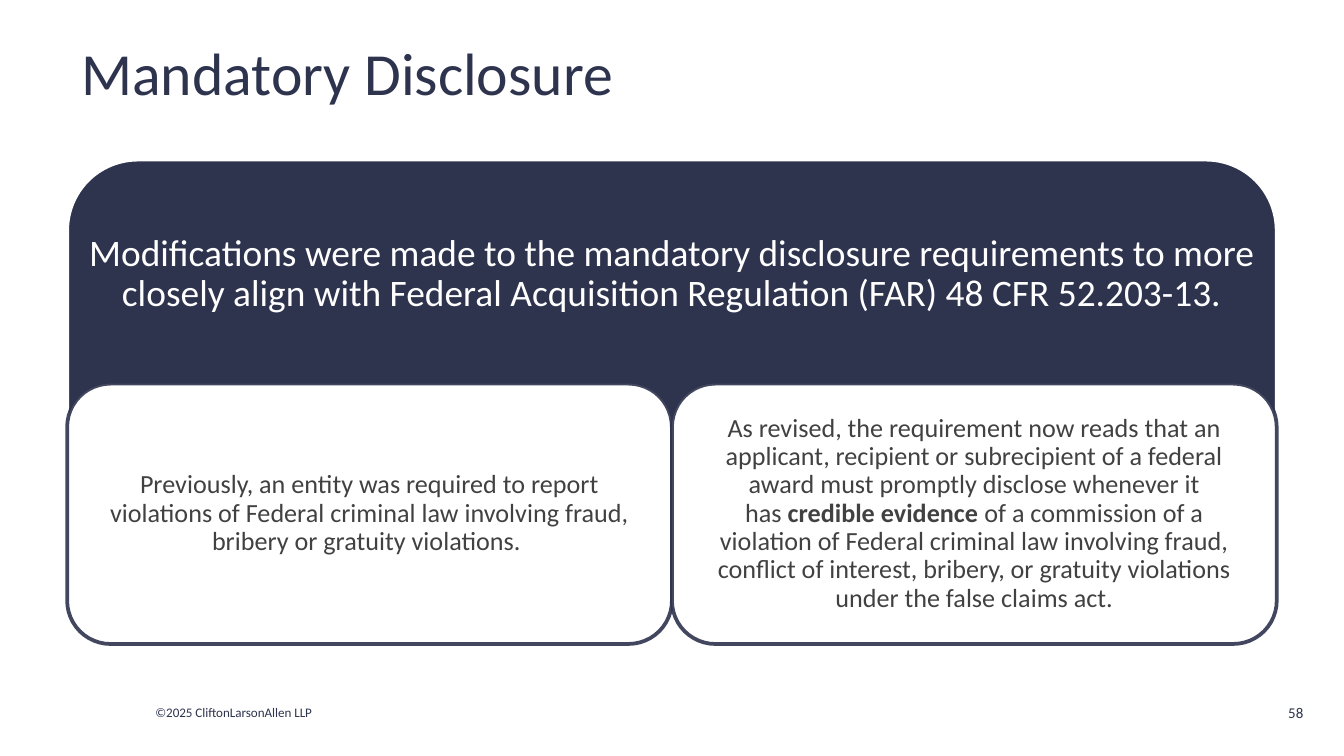
"""Build the Mandatory Disclosure slide: a banner over two rounded cards."""
from lxml import etree
from pptx import Presentation
from pptx.dml.color import RGBColor
from pptx.enum.shapes import MSO_SHAPE as SHAPE
from pptx.enum.text import MSO_ANCHOR as ANCHOR, PP_ALIGN as ALIGN
from pptx.oxml.ns import qn
from pptx.util import Pt

PX = 9525
NBSP = chr(160)
COLORS = {"navy": "2E334E", "white": "FFFFFF", "gray": "414142"}


def rounded(shapes, box, fill, line):
    sp = shapes.add_shape(SHAPE.ROUNDED_RECTANGLE, *[v * PX for v in box])
    sp.shadow.inherit = False
    sp.fill.solid()
    sp.fill.fore_color.rgb = RGBColor.from_string(COLORS[fill])
    sp.line.color.rgb = RGBColor.from_string(COLORS[line])
    sp.line.width = Pt(2)
    return sp


def write(sp, runs, size, color, align=ALIGN.LEFT, inset=(10, 5), spacing=1.0):
    tf = sp.text_frame
    x, y = [v * PX for v in inset]
    frame = {"word_wrap": True, "vertical_anchor": ANCHOR.MIDDLE,
             "margin_left": x, "margin_right": x, "margin_top": y, "margin_bottom": y}
    for name, value in frame.items():
        setattr(tf, name, value)
    p = tf.paragraphs[0]
    p.alignment = align
    p.line_spacing = spacing
    for text, bold in runs:
        r = p.add_run()
        r.text = text
        for name, value in {"name": "Calibri", "size": Pt(size), "bold": bold}.items():
            setattr(r.font, name, value)
        r.font.color.rgb = RGBColor.from_string(COLORS[color])


prs = Presentation()
prs.slide_width, prs.slide_height = 960 * PX, 540 * PX
s = prs.slides.add_slide(prs.slide_layouts[5])

title = s.shapes.title
title.left, title.top, title.width, title.height = [v * PX for v in (48, 15, 864, 72)]
write(title, [("Mandatory Disclosure", False)], 32, "navy")

rounded(s.shapes, (48, 114, 864, 303), "navy", "white")
banner = s.shapes.add_textbox(*[v * PX for v in (48, 114, 864, 164)])
write(banner, [("Modifications were made to the mandatory disclosure requirements to more "
                "closely align with Federal Acquisition Regulation (FAR) 48 CFR 52.203-13.", False)],
      20, "white", ALIGN.CENTER, (15, 15), 0.9)

cards = [
    [("Previously, an entity was required to report violations of Federal criminal law "
      "involving fraud, bribery or gratuity violations. ", False)],
    [("As revised, the requirement now reads that an applicant, recipient or subrecipient "
      "of a federal award must promptly disclose whenever it has" + NBSP, False),
     ("credible evidence", True),
     (NBSP + "of a commission of a violation of Federal criminal law involving fraud, conflict "
      "of interest, bribery, or gratuity violations under the false claims act.", False)],
]
for i, runs in enumerate(cards):
    card = rounded(s.shapes, (48 + 432 * i, 274, 432, 186), "white", "navy")
    line_rgb = card.element.spPr.find(qn("a:ln")).find(".//" + qn("a:srgbClr"))
    etree.SubElement(line_rgb, qn("a:alpha"), val="90000")
    write(card, runs, 14, "gray", ALIGN.CENTER, (10, 2), 0.9)

footers = [
    ((101, 498, 145, 21), "©2025 CliftonLarsonAllen LLP", 7, ALIGN.LEFT),
    ((900, 491, 41, 36), "58", 8, ALIGN.RIGHT),
]
for box, text, size, align in footers:
    sp = s.shapes.add_textbox(*[v * PX for v in box])
    write(sp, [(text, False)], size, "navy", align)

prs.save("out.pptx")
